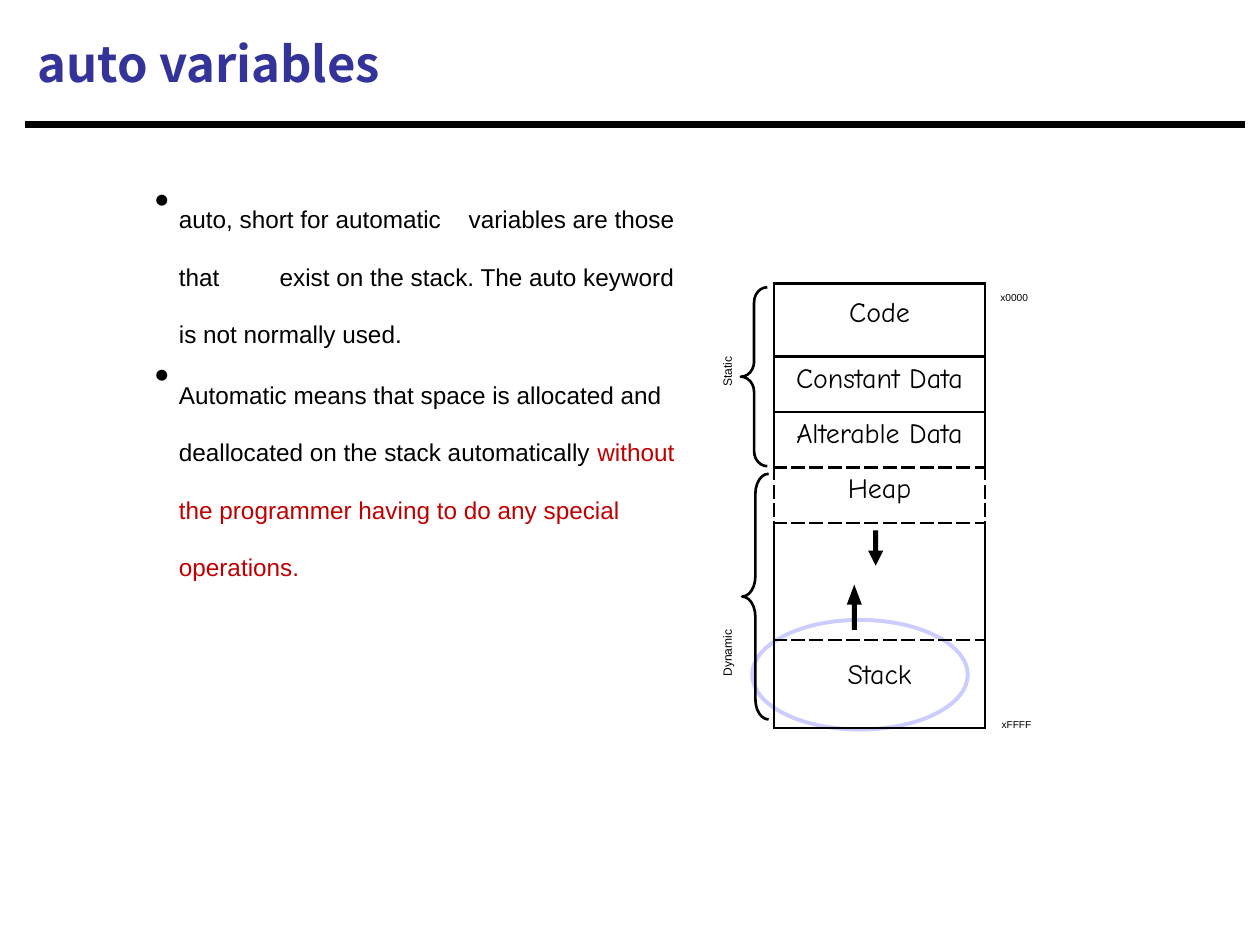
from lxml import etree
from pptx import Presentation, util as u
from pptx.dml.color import RGBColor
from pptx.enum import shapes, text
from pptx.oxml.ns import qn

PX = 9144  # 100 px to the inch
BLACK, BLUE, RED, LILAC = "000000", "333399", "C00000", "CCCCFF"
SUBSCRIPT = "-25000"


def px(length):
    return u.Emu(length * PX)


def color(value):
    return RGBColor.from_string(value)


def style(font, name, size, value=BLACK, bold=False, baseline=None):
    font.name, font.size, font.bold = name, u.Pt(size), bold
    font.color.rgb = color(value)
    if baseline:
        font._rPr.set("baseline", baseline)


def add_text_box(page, left, top, width, height, inset_top=1):
    box = page.shapes.add_textbox(px(left), px(top), px(width), px(height))
    frame = box.text_frame
    frame.word_wrap = True
    frame.margin_left = frame.margin_right = frame.margin_bottom = 0
    frame.margin_top = px(inset_top)
    return frame


def add_label(page, left, top, width, height, words, size, spacing=None, upright=False):
    frame = add_text_box(page, left, top, width, height, 0 if upright else 1)
    if upright:
        frame._txBody.bodyPr.set("vert", "vert270")
    para = frame.paragraphs[0]
    if spacing:
        para.line_spacing = u.Pt(spacing)
    if not upright:
        para.space_before = u.Pt(1)
    span = para.add_run()
    span.text = words
    style(span.font, "Arial", size, baseline=SUBSCRIPT)


def add_outline(page, kind, left, top, width, height, line=None, weight=1.5, fill=None, adjust=()):
    shape = page.shapes.add_shape(kind, px(left), px(top), px(width), px(height))
    shape.shadow.inherit = False
    for number, value in enumerate(adjust):
        shape.adjustments[number] = value
    if fill:
        shape.fill.solid()
        shape.fill.fore_color.rgb = color(fill)
    else:
        shape.fill.background()
    if line:
        shape.line.color.rgb = color(line)
        shape.line.width = u.Pt(weight)
    else:
        shape.line.fill.background()


def add_heading(page, left, top, width, height):
    title = page.shapes.title
    title.left, title.top, title.width, title.height = map(px, (left, top, width, height))
    frame = title.text_frame
    frame.vertical_anchor = text.MSO_ANCHOR.MIDDLE
    para = frame.paragraphs[0]
    para.alignment = text.PP_ALIGN.LEFT
    span = para.add_run()
    span.text = "auto variables"
    style(span.font, "Noto Sans CJK SC", 28, BLUE, bold=True)

    # Rule under the title
    rule = page.shapes.add_connector(
        shapes.MSO_CONNECTOR.STRAIGHT, px(left), px(top + 91), px(left + 968), px(top + 91))
    rule.line.color.rgb = color(BLACK)
    rule.line.width = u.Pt(3.75)
    etree.SubElement(rule._element.spPr, qn("a:effectLst"))


def add_bullets(page, left, top, width, height):
    frame = add_text_box(page, left, top, width, height)
    bullets = [
        (1, [("auto, short for automatic \tvariables are those that \texist on the stack. "
              "The auto keyword is not normally used.", BLACK)]),
        (2.1, [("Automatic means that space is allocated and deallocated "
                "on the stack automatically ", BLACK),
               ("without the programmer having to do any special operations.", RED)]),
    ]
    for number, (before, spans) in enumerate(bullets):
        para = frame.add_paragraph() if number else frame.paragraphs[0]
        para.space_before = u.Pt(before)
        settings = para._p.get_or_add_pPr()
        settings.set("marL", str(px(20)))
        settings.set("indent", str(px(-19)))
        etree.SubElement(settings, qn("a:buChar"), char="•")
        tabs = etree.SubElement(settings, qn("a:tabLst"))
        etree.SubElement(tabs, qn("a:tab"), pos=str(px(20)), algn="l")
        for words, value in spans:
            span = para.add_run()
            span.text = words
            style(span.font, "Arial", 24, value, baseline=SUBSCRIPT)


def set_borders(cell, dashed):
    settings = cell._tc.get_or_add_tcPr()
    for number, side in enumerate("LRTB"):
        line = etree.Element(qn("a:ln" + side), w=str(u.Pt(1.5)))
        fill = etree.SubElement(line, qn("a:solidFill"))
        etree.SubElement(fill, qn("a:srgbClr"), val=BLACK)
        etree.SubElement(line, qn("a:prstDash"), val="sysDash" if side in dashed else "solid")
        settings.insert(number, line)


def add_memory_table(page, left, top, width):
    # Words, row height, top inset, space before, dashed sides
    rows = [
        ("Code", 58, 11, 7.6, ""),
        ("Constant Data", 44, 5, 3.8, ""),
        ("Alterable Data", 44, 5, 3.8, "B"),
        ("Heap", 44, 5, 3.8, "LRTB"),
        ("", 93, 5, 0, "TB"),
        ("Stack", 70, 15, 10.6, "T"),
    ]
    height = sum(row[1] for row in rows)
    table = page.shapes.add_table(len(rows), 1, px(left), px(top), px(width), px(height)).table
    table.first_row = table.horz_banding = False
    for number, (words, row_height, inset, before, dashed) in enumerate(rows):
        table.rows[number].height = px(row_height)
        cell = table.cell(number, 0)
        cell.fill.background()
        set_borders(cell, dashed)
        cell.margin_left = cell.margin_right = cell.margin_bottom = 0
        cell.margin_top = px(inset)
        if words:
            para = cell.text_frame.paragraphs[0]
            para.alignment = text.PP_ALIGN.CENTER
            para.space_before = u.Pt(before)
            span = para.add_run()
            span.text = words
            style(span.font, "Comic Neue", 16)


def add_memory_map(page, left, top):
    kinds = shapes.MSO_SHAPE
    # Ring around the stack
    add_outline(page, kinds.OVAL, left + 34, top + 267, 171, 87, LILAC, 2.25)

    # Braces with their upright labels
    for name, x, y, height, depth, label_y, label_height in [
        ("Dynamic", 26, 151, 195, 0.76, 244, 68),
        ("Static", 25, 3, 142, 0.57, 38, 44),
    ]:
        add_outline(page, kinds.LEFT_BRACE, left + x, top + y, 21, height, BLACK,
                    adjust=(depth, 0.5))
        add_label(page, left, top + label_y, 21, label_height, name, 12, 14.2, upright=True)

    add_memory_table(page, left + 51, top, 168)

    # Directions of growth
    add_outline(page, kinds.UP_ARROW, left + 109, top + 239, 12, 36, fill=BLACK,
                adjust=(0.33, 1.33))
    add_outline(page, kinds.DOWN_ARROW, left + 126, top + 196, 12, 28, fill=BLACK,
                adjust=(0.33, 1))

    # Addresses
    add_label(page, left + 231, top - 4, 57, 18, "x0000", 10)
    add_label(page, left + 232, top + 341, 46, 28, "xFFFF", 10, 9.4)


def main():
    deck = Presentation()
    deck.slide_width, deck.slide_height = px(1000), px(750)
    page = deck.slides.add_slide(deck.slide_layouts[5])
    add_heading(page, 20, 8, 967, 84)
    add_bullets(page, 122, 139, 426, 449)
    add_memory_map(page, 563, 225)
    deck.save("out.pptx")


if __name__ == "__main__":
    main()
